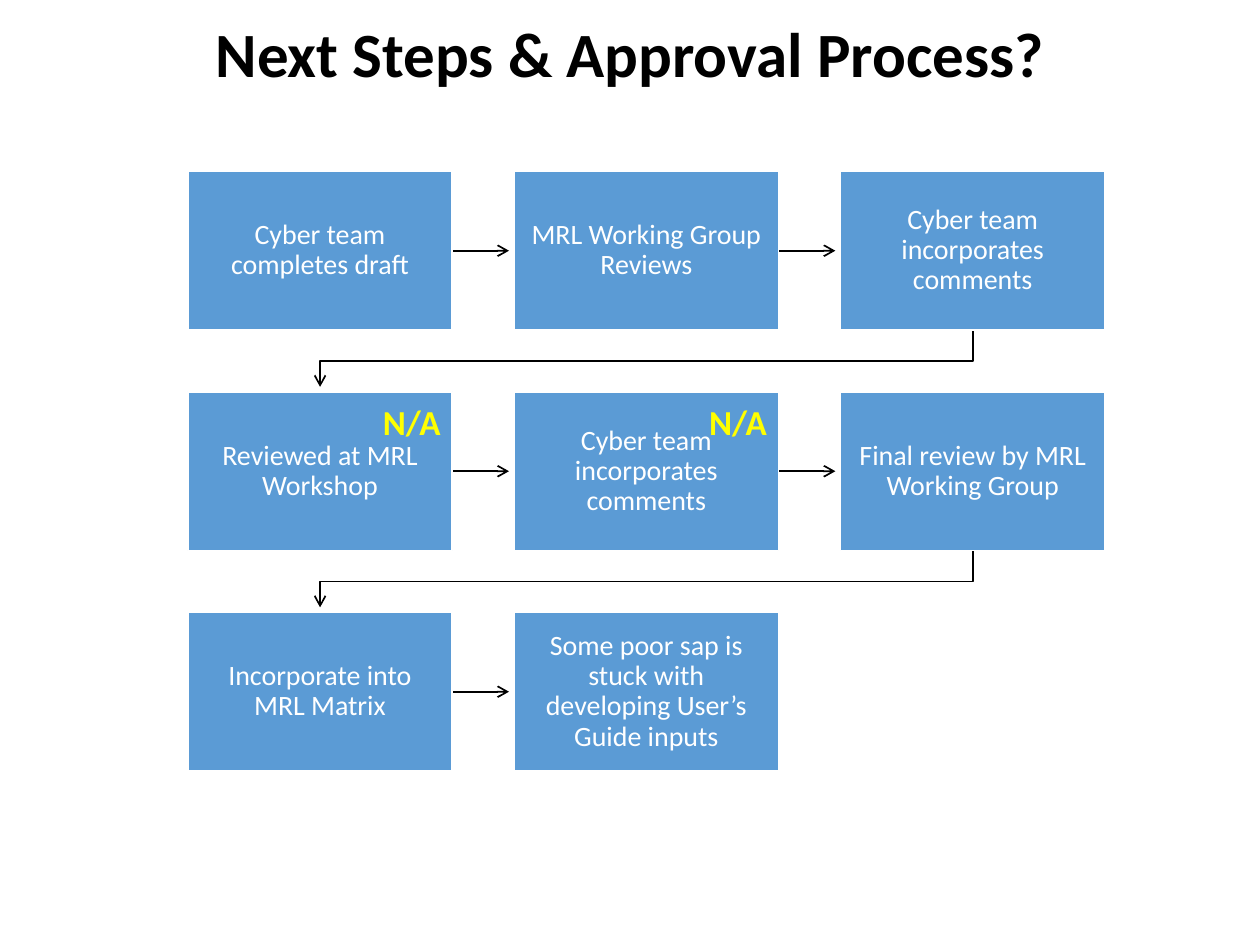
from lxml import etree
from pptx import Presentation
from pptx.dml.color import RGBColor
from pptx.enum.shapes import MSO_CONNECTOR, MSO_SHAPE
from pptx.enum.text import MSO_ANCHOR, MSO_AUTO_SIZE, PP_ALIGN
from pptx.oxml.ns import qn
from pptx.util import Inches, Pt

CENTER = PP_ALIGN.CENTER
MIDDLE = MSO_ANCHOR.MIDDLE
RECTANGLE = MSO_SHAPE.RECTANGLE
STRAIGHT = MSO_CONNECTOR.STRAIGHT
FIT_SHAPE = MSO_AUTO_SIZE.SHAPE_TO_FIT_TEXT

COLORS = {"black": "000000", "white": "FFFFFF", "box": "5B9BD5", "mark": "FFFF00"}
FONT = "Calibri"

STEPS = [
    "Cyber team completes draft",
    "MRL Working Group Reviews",
    "Cyber team incorporates comments",
    "Reviewed at MRL Workshop",
    "Cyber team incorporates comments",
    "Final review by MRL Working Group",
    "Incorporate into MRL Matrix",
    "Some poor sap is stuck with developing User’s Guide inputs",
]
SKIPPED = [3, 4]  # steps marked N/A

COLUMNS = 3
LEFT, TOP = 1.49, 1.36
BOX_W, BOX_H = 2.1, 1.26
PITCH_X, PITCH_Y = 2.59, 1.75
ARROW_GAP = 0.04


def rgb(name):
    return RGBColor.from_string(COLORS[name])


def format_text(p, size, color, bold=False):
    p.font.name = FONT
    p.font.size = Pt(size)
    p.font.bold = bold
    p.font.color.rgb = rgb(color)


def step_position(index):
    row, column = divmod(index, COLUMNS)
    return LEFT + column * PITCH_X, TOP + row * PITCH_Y


def set_title(s, text):
    title = s.shapes.title
    title.left, title.top = Inches(0), Inches(0)
    title.width, title.height = Inches(10), Inches(0.9)
    tf = title.text_frame
    tf.text = text
    tf.vertical_anchor = MIDDLE
    p = tf.paragraphs[0]
    p.alignment = CENTER
    p.line_spacing = 0.9
    format_text(p, 36, "black", bold=True)


def add_step(s, index, text):
    x, y = step_position(index)
    sp = s.shapes.add_shape(RECTANGLE, Inches(x), Inches(y), Inches(BOX_W), Inches(BOX_H))
    sp.shadow.inherit = False
    sp.fill.solid()
    sp.fill.fore_color.rgb = rgb("box")
    sp.line.color.rgb = rgb("white")
    sp.line.width = Pt(1)
    tf = sp.text_frame
    tf.word_wrap = True
    tf.vertical_anchor = MIDDLE
    tf.margin_left = tf.margin_right = tf.margin_top = tf.margin_bottom = Inches(0.12)
    tf.text = text
    p = tf.paragraphs[0]
    p.alignment = CENTER
    p.line_spacing = 0.9
    format_text(p, 16, "white")


def format_arrow(sp):
    """Give a line its colour, width and open arrowhead, without a shadow."""
    sp.line.color.rgb = rgb("black")
    sp.line.width = Pt(1)
    spPr = sp._element.spPr
    etree.SubElement(spPr.find(qn("a:ln")), qn("a:tailEnd"), type="arrow")
    etree.SubElement(spPr, qn("a:effectLst"))


def add_arrow_right(s, index):
    x, y = step_position(index)
    middle = Inches(y + BOX_H / 2)
    start, end = Inches(x + BOX_W), Inches(x + PITCH_X - ARROW_GAP)
    format_arrow(s.shapes.add_connector(STRAIGHT, start, middle, end, middle))


def add_arrow_to_next_row(s, index):
    x, y = step_position(index)
    start_x, end_x = Inches(x + BOX_W / 2), Inches(LEFT + BOX_W / 2)
    start_y, end_y = Inches(y + BOX_H), Inches(y + PITCH_Y - ARROW_GAP)
    turn_y = Inches(y + (BOX_H + PITCH_Y) / 2)
    builder = s.shapes.build_freeform(start_x, start_y)
    builder.add_line_segments(
        [(start_x, turn_y), (end_x, turn_y), (end_x, end_y)], close=False)
    sp = builder.convert_to_shape()
    sp.fill.background()
    format_arrow(sp)


def add_skipped_mark(s, index):
    x, y = step_position(index)
    sp = s.shapes.add_textbox(Inches(x + 1.45), Inches(y + 0.02), Inches(0.73), Inches(0.44))
    tf = sp.text_frame
    tf.word_wrap = False
    tf.auto_size = FIT_SHAPE
    tf.text = "N/A"
    format_text(tf.paragraphs[0], 20, "mark", bold=True)


def main():
    prs = Presentation()
    prs.slide_width, prs.slide_height = Inches(10), Inches(7.5)
    s = prs.slides.add_slide(prs.slide_layouts[5])
    set_title(s, "Next Steps & Approval Process?")
    for index in range(len(STEPS) - 1):
        if (index + 1) % COLUMNS:
            add_arrow_right(s, index)
        else:
            add_arrow_to_next_row(s, index)
    for index, text in enumerate(STEPS):
        add_step(s, index, text)
    for index in SKIPPED:
        add_skipped_mark(s, index)
    prs.save("out.pptx")


if __name__ == "__main__":
    main()
